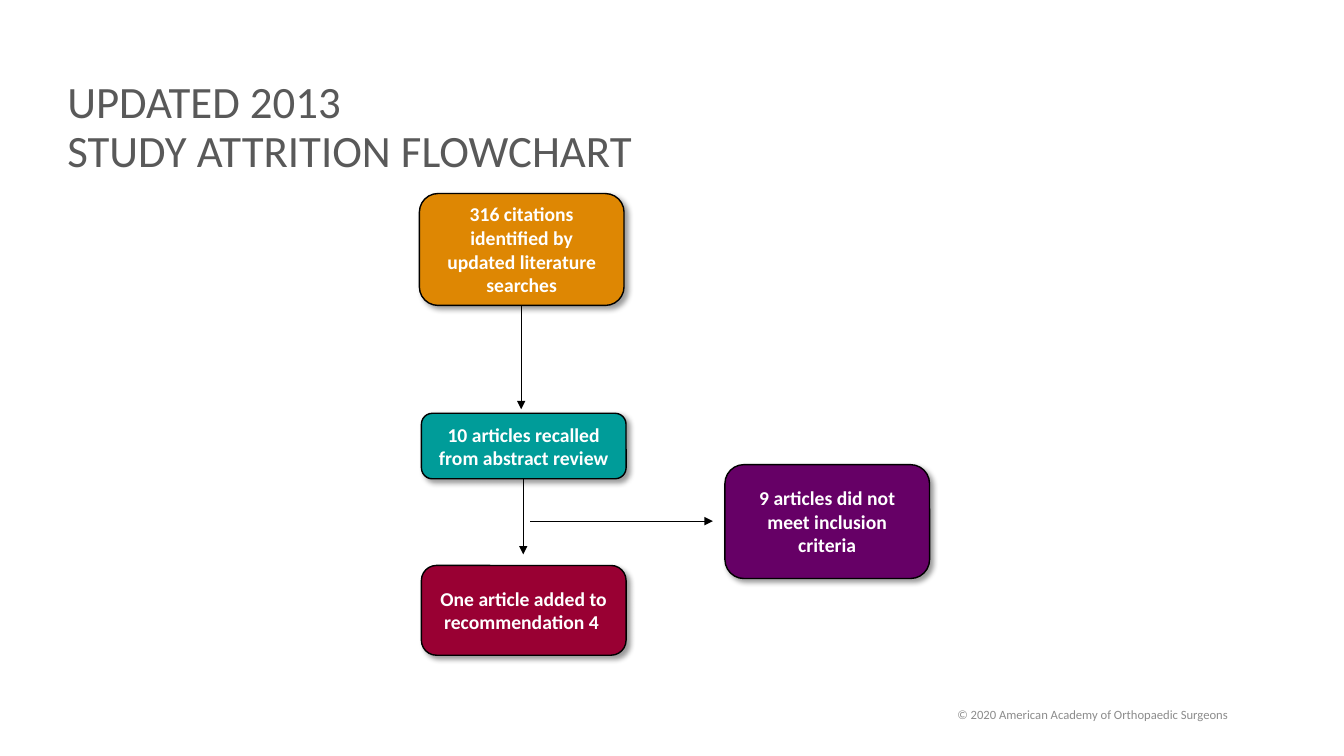
from lxml import etree
from pptx import Presentation
from pptx.dml.color import RGBColor
from pptx.enum.shapes import MSO_CONNECTOR, MSO_SHAPE
from pptx.enum.text import MSO_ANCHOR, PP_ALIGN
from pptx.oxml import parse_xml
from pptx.oxml.ns import nsdecls, qn
from pptx.util import Inches, Pt

ROUNDED = MSO_SHAPE.ROUNDED_RECTANGLE
STRAIGHT = MSO_CONNECTOR.STRAIGHT
MIDDLE = MSO_ANCHOR.MIDDLE
LEFT, CENTER = PP_ALIGN.LEFT, PP_ALIGN.CENTER

WHITE = RGBColor(0xFF, 0xFF, 0xFF)
BLACK = RGBColor(0x00, 0x00, 0x00)
TITLE_GRAY = RGBColor(0x59, 0x59, 0x59)
FOOTER_GRAY = RGBColor(0x8C, 0x8C, 0x8C)
ORANGE = RGBColor(0xDE, 0x87, 0x03)
TEAL = RGBColor(0x00, 0x9C, 0x99)
PURPLE = RGBColor(0x66, 0x00, 0x66)
CRIMSON = RGBColor(0x99, 0x00, 0x33)

STEP_WIDTH = 2.03
SHADOW = (
    f'<a:outerShdw {nsdecls("a")} blurRad="{Pt(4)}" dist="{Pt(3)}" '
    'dir="2700000" algn="tl" rotWithShape="0">'
    '<a:srgbClr val="000000"><a:alpha val="40000"/></a:srgbClr></a:outerShdw>'
)


class Flowchart:
    font_name = "Calibri"

    def __init__(self, slide):
        self.slide = slide

    def set_wording(self, frame, lines, size, color, bold=False, align=LEFT, spacing=1.0):
        frame.word_wrap = True
        frame.vertical_anchor = MIDDLE
        style = {"name": self.font_name, "size": Pt(size), "bold": bold}
        for index, line in enumerate(lines):
            paragraph = frame.add_paragraph() if index else frame.paragraphs[0]
            paragraph.alignment = align
            paragraph.line_spacing = spacing
            run = paragraph.add_run()
            run.text = line
            for attribute, value in style.items():
                setattr(run.font, attribute, value)
            run.font.color.rgb = color

    def label(self, left, top, width, height, lines, size, color, **layout):
        box = self.slide.shapes.add_textbox(*map(Inches, (left, top, width, height)))
        self.set_wording(box.text_frame, lines, size, color, **layout)

    def step(self, left, top, height, fill, wording):
        step = self.slide.shapes.add_shape(
            ROUNDED, *map(Inches, (left, top, STEP_WIDTH, height)))
        step.fill.solid()
        step.fill.fore_color.rgb = fill
        step.line.color.rgb = BLACK
        step.line.width = Pt(1)
        step.shadow.inherit = False
        effects = step._element.spPr.find(qn("a:effectLst"))
        effects.append(parse_xml(SHADOW))
        self.set_wording(step.text_frame, [wording], 14, WHITE, bold=True, align=CENTER)

    def arrow(self, *ends):
        arrow = self.slide.shapes.add_connector(STRAIGHT, *map(Inches, ends))
        arrow.line.color.rgb = BLACK
        arrow.line.width = Pt(0.5)
        properties = arrow._element.spPr
        etree.SubElement(properties.find(qn("a:ln")), qn("a:tailEnd"), type="triangle")
        etree.SubElement(properties, qn("a:effectLst"))


def main():
    presentation = Presentation()
    presentation.slide_width = Inches(13.33)
    presentation.slide_height = Inches(7.5)
    chart = Flowchart(presentation.slides.add_slide(presentation.slide_layouts[6]))

    chart.label(8.6, 6.89, 4.5, 0.4,
                ["© 2020 American Academy of Orthopaedic Surgeons "],
                9, FOOTER_GRAY, align=CENTER)
    chart.label(0.57, 0.59, 6.43, 1.37,
                ["UPDATED 2013", "STUDY ATTRITION FLOWCHART"],
                32, TITLE_GRAY, spacing=0.9)

    for ends in [
        (5.19, 4.37, 5.19, 5.5),
        (5.26, 5.17, 7.07, 5.17),
        (5.17, 2.94, 5.17, 4.06),
    ]:
        chart.arrow(*ends)

    for step in [
        (4.16, 1.92, 1.11, ORANGE, "316 citations identified by updated literature searches"),
        (4.18, 4.1, 0.65, TEAL, "10 articles recalled from abstract review"),
        (7.19, 4.61, 1.13, PURPLE, "9 articles did not meet inclusion criteria"),
        (4.18, 5.61, 0.89, CRIMSON, "One article added to recommendation 4 "),
    ]:
        chart.step(*step)

    presentation.save("out.pptx")


if __name__ == "__main__":
    main()
